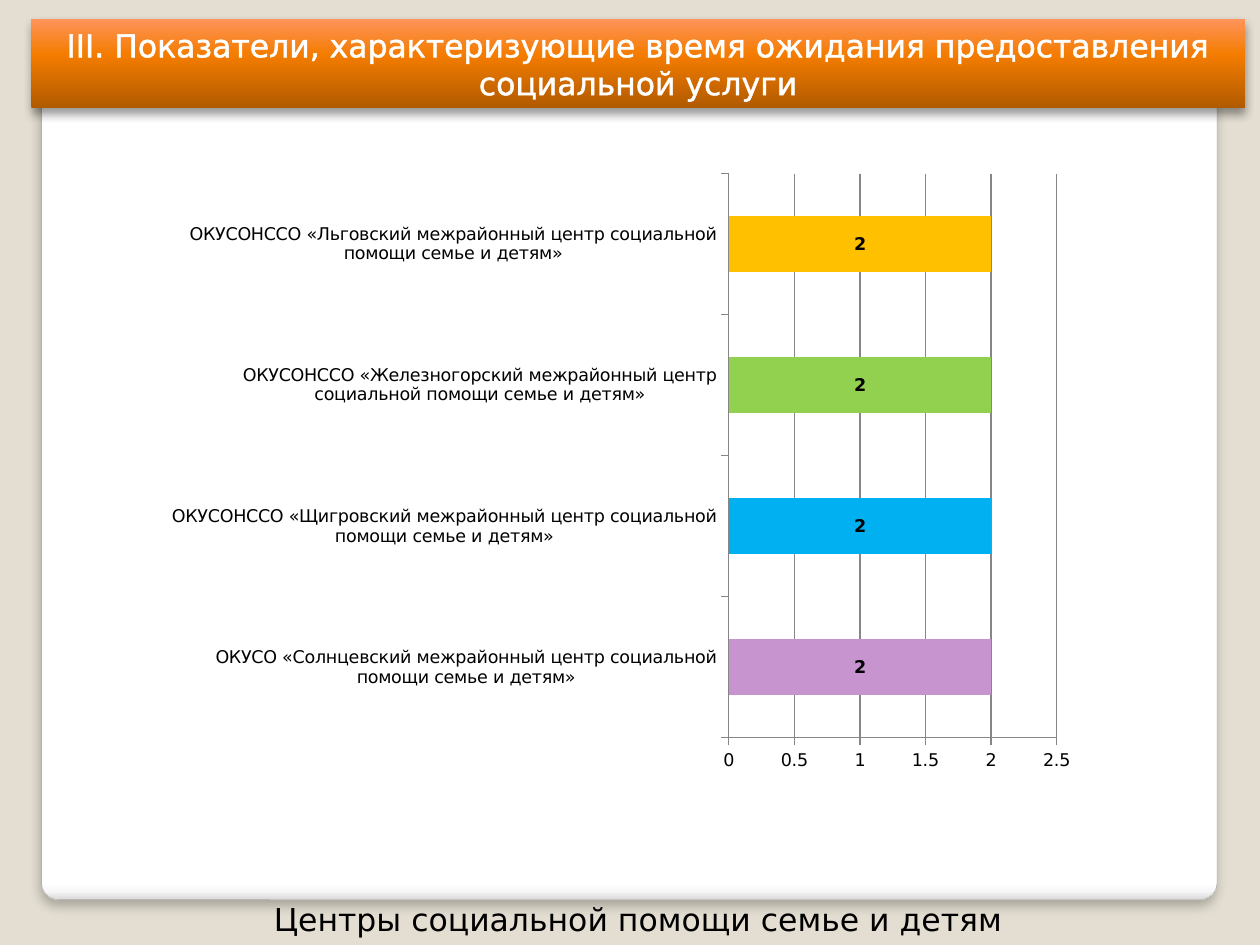
from dataclasses import dataclass

from lxml.etree import SubElement
from pptx import Presentation
from pptx.chart.data import CategoryChartData
from pptx.dml.color import RGBColor
from pptx.enum.chart import XL_CHART_TYPE, XL_LABEL_POSITION, XL_TICK_MARK
from pptx.enum.shapes import MSO_SHAPE
from pptx.enum.text import MSO_ANCHOR, MSO_AUTO_SIZE, PP_ALIGN
from pptx.oxml.ns import qn
from pptx.util import Pt

TITLE = "III. Показатели, характеризующие время ожидания предоставления социальной услуги"
CAPTION = "Центры социальной помощи семье и детям"
CENTRES = [
    ("ОКУСО «Солнцевский межрайонный центр социальной помощи семье и детям»", 2, "C794D0"),
    ("ОКУСОНССО «Щигровский межрайонный центр социальной помощи семье и детям»", 2, "00B0F0"),
    ("ОКУСОНССО «Железногорский межрайонный центр социальной помощи семье и детям»", 2, "92D050"),
    ("ОКУСОНССО «Льговский межрайонный центр социальной помощи семье и детям»", 2, "FFC000"),
]


@dataclass(frozen=True)
class Theme:
    font: str = "DejaVu Sans"
    heading_size: float = 18
    chart_size: float = 10
    background: str = "E3DED1"
    text: str = "000000"
    title_text: str = "FFFFFF"
    panel_line: str = "A4A4A4"
    axis: str = "868686"
    series: str = "F07F09"
    panel: tuple = ((0, "FFFFFF"), (98, "FFFFFF"), (99, "F7F7F7"), (100, "DADADA"))
    banner: tuple = ((0, "B05A00"), (60, "F47C00"), (100, "FF945C"))


THEME = Theme()
PANEL_BOX = (23.76, 25.92, 671.76, 488.16)
BANNER_BOX = (18, 10.8, 693.36, 51.12)
CAPTION_BOX = (18, 510.48, 693.36, 28.8)
CHART_BOX = (97.92, 92.16, 524.16, 354.96)


def points(box):
    return [Pt(length) for length in box]


def rgb(value):
    return RGBColor.from_string(value)


def add_gradient(shape, stops, angle):
    shape.fill.gradient()
    shape.fill.gradient_angle = angle
    stop_list = next(shape._element.spPr.iter(qn("a:gsLst")))
    stop_list.clear()
    for position, color in stops:
        stop = SubElement(stop_list, qn("a:gs"), pos=str(position * 1000))
        SubElement(stop, qn("a:srgbClr"), val=color)


def add_shadow(shape, opacity, blur, distance):
    shape.shadow.inherit = False
    effects = shape._element.spPr.find(qn("a:effectLst"))
    shadow = SubElement(effects, qn("a:outerShdw"), blurRad=str(Pt(blur)),
                        dist=str(Pt(distance)), dir="5400000", rotWithShape="0")
    color = SubElement(shadow, qn("a:srgbClr"), val=THEME.text)
    SubElement(color, qn("a:alpha"), val=str(opacity * 1000))


def write_text(shape, text, size=THEME.heading_size, color=THEME.text,
               anchor=MSO_ANCHOR.TOP, outline=None):
    frame = shape.text_frame
    frame.word_wrap = True
    frame.auto_size = MSO_AUTO_SIZE.SHAPE_TO_FIT_TEXT
    frame.vertical_anchor = anchor
    paragraph = frame.paragraphs[0]
    paragraph.alignment = PP_ALIGN.CENTER
    run = paragraph.add_run()
    run.text = text
    run.font.name = THEME.font
    run.font.size = Pt(size)
    run.font.color.rgb = rgb(color)
    if outline:
        properties = run.font._element
        line = SubElement(properties, qn("a:ln"), w=str(Pt(outline)))
        fill = SubElement(line, qn("a:solidFill"))
        SubElement(fill, qn("a:srgbClr"), val=color)
        properties.insert(0, line)


def add_panel(slide):
    panel = slide.shapes.add_shape(MSO_SHAPE.ROUNDED_RECTANGLE, *points(PANEL_BOX))
    panel.adjustments[0] = 0.02
    add_gradient(panel, THEME.panel, 270)
    panel.line.color.rgb = rgb(THEME.panel_line)
    panel.line.width = Pt(0.16)
    add_shadow(panel, 25, 6, 4)


def add_banner(slide):
    banner = slide.shapes.add_shape(MSO_SHAPE.RECTANGLE, *points(BANNER_BOX))
    add_gradient(banner, THEME.banner, 90)
    banner.line.fill.background()
    add_shadow(banner, 40, 5.2, 3)
    write_text(banner, TITLE, color=THEME.title_text, anchor=MSO_ANCHOR.MIDDLE, outline=1.45)


def add_waiting_chart(slide):
    names, days, colors = zip(*CENTRES)
    data = CategoryChartData()
    data.categories = names
    data.add_series("Series 1", days)
    chart = slide.shapes.add_chart(XL_CHART_TYPE.BAR_STACKED, *points(CHART_BOX), data).chart
    chart.has_legend = False
    chart.has_title = False
    chart.font.name = THEME.font
    chart.font.size = Pt(THEME.chart_size)
    chart.font.color.rgb = rgb(THEME.text)

    for axis in (chart.category_axis, chart.value_axis):
        axis.major_tick_mark = XL_TICK_MARK.OUTSIDE
        axis.minor_tick_mark = XL_TICK_MARK.NONE
        axis.format.line.color.rgb = rgb(THEME.axis)
    chart.category_axis.has_major_gridlines = False
    chart.value_axis.has_major_gridlines = True
    chart.value_axis.major_gridlines.format.line.color.rgb = rgb(THEME.axis)

    plot = chart.plots[0]
    plot.gap_width = 150
    plot.overlap = 100
    plot.vary_by_categories = False
    waiting = plot.series[0]
    waiting.format.fill.solid()
    waiting.format.fill.fore_color.rgb = rgb(THEME.series)
    for index, color in enumerate(colors):
        bar_fill = waiting.points[index].format.fill
        bar_fill.solid()
        bar_fill.fore_color.rgb = rgb(color)
    labels = waiting.data_labels
    labels.show_value = True
    labels.position = XL_LABEL_POSITION.CENTER
    labels.font.bold = True
    labels.font.name = THEME.font
    labels.font.size = Pt(THEME.chart_size)
    labels.font.color.rgb = rgb(THEME.text)


def main():
    deck = Presentation()
    deck.slide_width, deck.slide_height = Pt(720), Pt(540)
    slide = deck.slides.add_slide(deck.slide_layouts[6])
    slide.background.fill.solid()
    slide.background.fill.fore_color.rgb = rgb(THEME.background)
    add_panel(slide)
    add_banner(slide)
    write_text(slide.shapes.add_textbox(*points(CAPTION_BOX)), CAPTION)
    add_waiting_chart(slide)
    deck.save("out.pptx")


if __name__ == "__main__":
    main()
